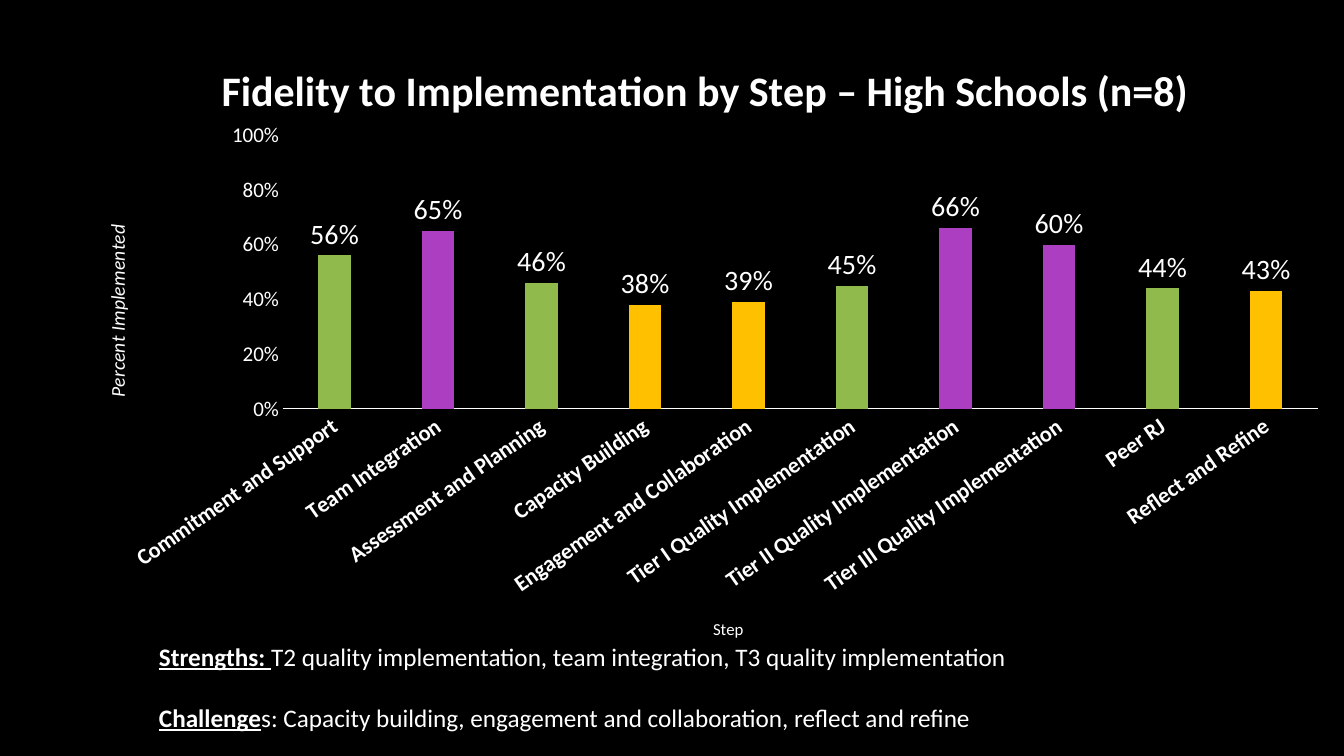
"""Build a slide charting implementation fidelity by step in high schools."""
from lxml.etree import SubElement
from pptx import Presentation
from pptx.chart.data import CategoryChartData
from pptx.dml.color import RGBColor
from pptx.enum.chart import XL_CHART_TYPE, XL_LABEL_POSITION, XL_TICK_MARK
from pptx.oxml.ns import qn
from pptx.util import Pt

PX = 12192000 / 1344
WHITE, GREEN, PURPLE, AMBER = "FFFFFF", "90BA4C", "AC3EC1", "FFC000"
CHART_BOX = (52, 31, 1291, 626)


def style(font, size, bold=False, italic=False):
    font.name, font.size, font.bold, font.italic = "Calibri", Pt(size), bold, italic
    font.color.rgb = RGBColor.from_string(WHITE)


def place(element, index, **position):
    for old in element.findall(qn("c:layout")):
        element.remove(old)
    layout = SubElement(element, qn("c:layout"))
    element.insert(index, layout)
    manual = SubElement(layout, qn("c:manualLayout"))
    if "w" in position:
        SubElement(manual, qn("c:layoutTarget")).set("val", "inner")
    for axis in "xy":
        SubElement(manual, qn(f"c:{axis}Mode")).set("val", "edge")
    left, top, width, height = CHART_BOX
    origin = {"x": left, "y": top, "w": 0, "h": 0}
    extent = {"x": width, "y": height, "w": width, "h": height}
    for key, px in position.items():
        fraction = (px - origin[key]) / extent[key]
        SubElement(manual, qn(f"c:{key}")).set("val", f"{fraction:.4f}")


steps = [
    ("Commitment and Support", 0.56, GREEN),
    ("Team Integration", 0.65, PURPLE),
    ("Assessment and Planning", 0.46, GREEN),
    ("Capacity Building", 0.38, AMBER),
    ("Engagement and Collaboration", 0.39, AMBER),
    ("Tier I Quality Implementation", 0.45, GREEN),
    ("Tier II Quality Implementation", 0.66, PURPLE),
    ("Tier III Quality Implementation", 0.6, PURPLE),
    ("Peer RJ", 0.44, GREEN),
    ("Reflect and Refine", 0.43, AMBER),
]
findings = [
    ("Strengths: ", "T2 quality implementation, team integration, T3 quality implementation"),
    ("Challenge", "s: Capacity building, engagement and collaboration, reflect and refine"),
]

deck = Presentation()
deck.slide_width, deck.slide_height = round(1344 * PX), round(756 * PX)
slide = deck.slides.add_slide(deck.slide_layouts[6])
slide.background.fill.solid()
slide.background.fill.fore_color.rgb = RGBColor.from_string("000000")

fidelity = CategoryChartData(number_format="0%")
fidelity.categories = [step for step, share, color in steps]
fidelity.add_series("Series 1", [share for step, share, color in steps])
chart = slide.shapes.add_chart(
    XL_CHART_TYPE.COLUMN_CLUSTERED, *(round(px * PX) for px in CHART_BOX), fidelity
).chart
style(chart.font, 10)
chart.has_legend = False
chart.has_title = True
place(chart._chartSpace.chart.plotArea, 0, x=283, y=135, w=1035, h=274)

step_axis, percent_axis = chart.category_axis, chart.value_axis
for axis, size, bold in ((step_axis, 16, True), (percent_axis, 15, False)):
    axis.has_title = True
    axis.has_major_gridlines = False
    axis.major_tick_mark = axis.minor_tick_mark = XL_TICK_MARK.NONE
    style(axis.tick_labels.font, size, bold)
step_axis.format.line.color.rgb = RGBColor.from_string(WHITE)
step_axis.format.line.width = Pt(0.75)
step_axis._element.find(qn("c:txPr")).find(qn("a:bodyPr")).set("rot", "-2100000")
percent_axis.format.line.fill.background()
percent_axis.minimum_scale, percent_axis.maximum_scale = 0, 1
percent_axis.major_unit = 0.2
percent_axis.tick_labels.number_format = "0%"
percent_axis.tick_labels.number_format_is_linked = False

headings = [
    (chart.chart_title, "Fidelity to Implementation by Step – High Schools (n=8)", 30, True, False, 214, 54),
    (step_axis.axis_title, "Step", 12, False, False, 710, 615),
    (percent_axis.axis_title, "Percent Implemented", 14, False, True, 100, 221),
]
for heading, wording, size, bold, italic, left, top in headings:
    heading.text_frame.text = wording
    style(heading.text_frame.paragraphs[0].font, size, bold, italic)
    place(heading._element, 1, x=left, y=top)
percent_body = percent_axis.axis_title.text_frame._txBody.find(qn("a:bodyPr"))
percent_body.set("rot", "-5400000")
percent_body.set("vert", "horz")

columns = chart.plots[0]
columns.gap_width, columns.overlap, columns.vary_by_categories = 219, -27, False
series = columns.series[0]
series.format.fill.solid()
series.format.fill.fore_color.rgb = RGBColor.from_string(GREEN)
for index, (step, share, color) in enumerate(steps):
    if color != GREEN:
        column_fill = series.points[index].format.fill
        column_fill.solid()
        column_fill.fore_color.rgb = RGBColor.from_string(color)
labels = series.data_labels
labels.show_value = True
labels.position = XL_LABEL_POSITION.OUTSIDE_END
labels.number_format, labels.number_format_is_linked = "0%", False
style(labels.font, 20)

summary = slide.shapes.add_textbox(*(round(px * PX) for px in (149, 636, 1042, 102))).text_frame
summary.word_wrap = True
for index, (lead, detail) in enumerate(findings):
    paragraph = summary.add_paragraph() if index else summary.paragraphs[0]
    if index:
        paragraph.space_before = Pt(22)
    for wording, is_lead in ((lead, True), (detail, False)):
        run = paragraph.add_run()
        run.text = wording
        style(run.font, 18, is_lead)
        run.font.underline = is_lead

deck.save("out.pptx")
